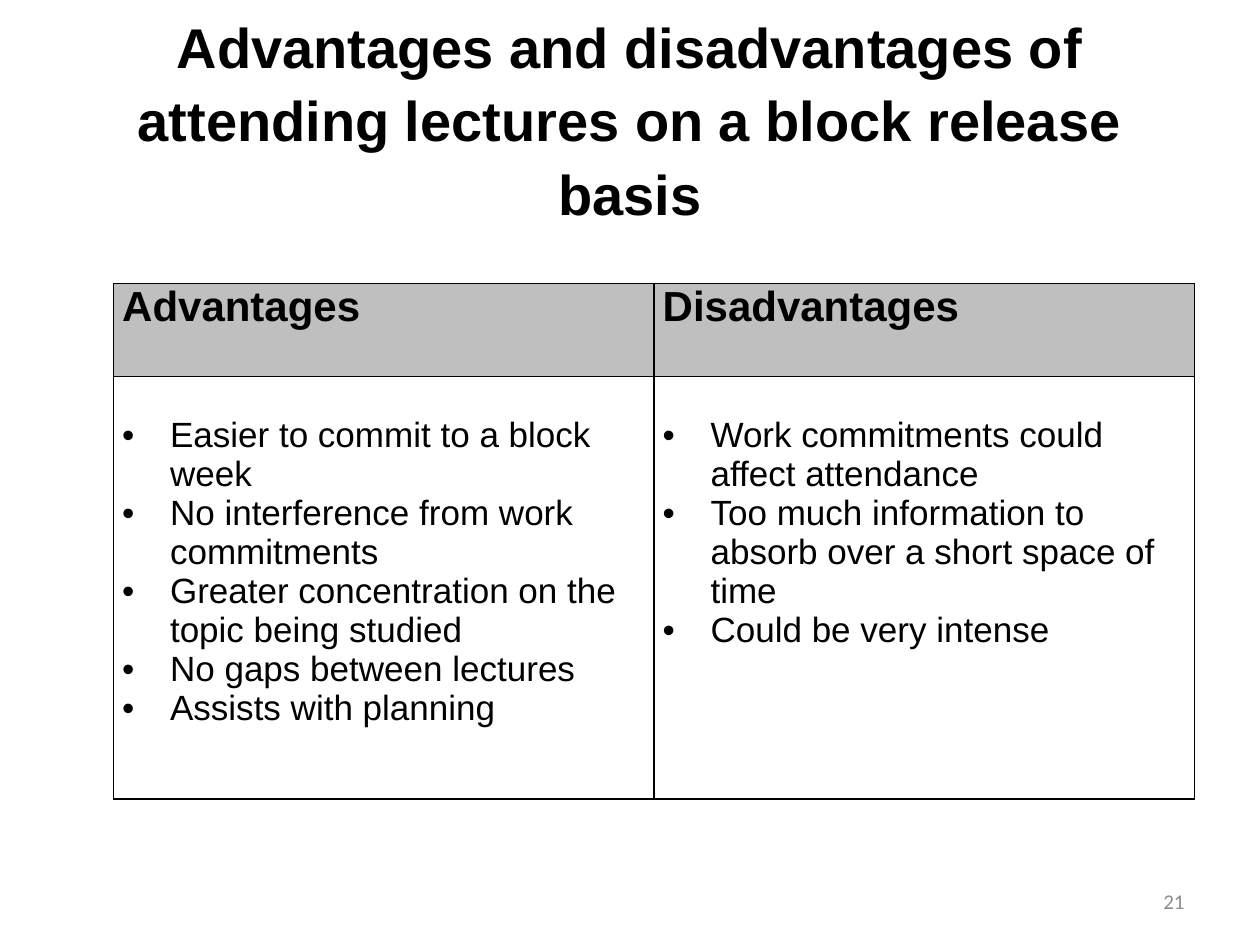
from lxml.etree import SubElement
from pptx import Presentation
from pptx.dml.color import RGBColor
from pptx.enum.text import MSO_ANCHOR as Anchor, MSO_AUTO_SIZE as AutoSize, PP_ALIGN as Align
from pptx.oxml.ns import qn
from pptx.util import Inches, Pt

INDENT = Inches(0.38)
BULLET_LINE = 0.31  # height of one line of list text, in inches


def write(frame, *lines, size, font="Arial", color="000000", bold=False,
          align=Align.LEFT, spacing=None, bullet=None):
    frame.word_wrap = True
    for index, line in enumerate(lines):
        paragraph = frame.paragraphs[0] if index == 0 else frame.add_paragraph()
        paragraph.alignment = align
        if spacing:
            paragraph.line_spacing = spacing
        run = paragraph.add_run()
        run.text = line
        run.font.name, run.font.size, run.font.bold = font, Pt(size), bold
        run.font.color.rgb = RGBColor.from_string(color)
        if bullet:
            properties = paragraph._p.get_or_add_pPr()
            properties.set("marL", str(INDENT))
            properties.set("indent", str(-INDENT))
            SubElement(properties, qn("a:buFont"), typeface="Arial")
            SubElement(properties, qn("a:buChar"), char=bullet)


def add_borders(cell, color="000000", width=1):
    properties = cell._tc.get_or_add_tcPr()
    for position, side in enumerate(("lnL", "lnR", "lnT", "lnB")):
        line = properties.makeelement(qn(f"a:{side}"), {"w": str(Pt(width))})
        fill = SubElement(line, qn("a:solidFill"))
        SubElement(fill, qn("a:srgbClr"), val=color)
        properties.insert(position, line)


presentation = Presentation()
presentation.slide_width, presentation.slide_height = Inches(10), Inches(7.5)
slide = presentation.slides.add_slide(presentation.slide_layouts[5])

# Title
title = slide.shapes.title
title.left, title.top, title.width, title.height = map(Inches, (0.5, 0.3, 9, 1.25))
title.text_frame.auto_size = AutoSize.NONE
title.text_frame.vertical_anchor = Anchor.MIDDLE
write(title.text_frame,
      "Advantages and disadvantages of attending lectures on a block release basis",
      size=32, bold=True, align=Align.CENTER, spacing=1.09)

# Comparison table: one column per heading
columns = {
    "Advantages": [
        "Easier to commit to a block week",
        "No interference from work commitments",
        "Greater concentration on the topic being studied",
        "No gaps between lectures",
        "Assists with planning",
    ],
    "Disadvantages": [
        "Work commitments could affect attendance",
        "Too much information to absorb over a short space of time",
        "Could be very intense",
    ],
}
row_heights = (0.74, 3.35)
table = slide.shapes.add_table(
    len(row_heights), len(columns), Inches(0.9), Inches(2.25),
    Inches(8.58), Inches(sum(row_heights))).table
table.horz_banding = False
for row, height in zip(table.rows, row_heights):
    row.height = Inches(height)

for column, (heading, points) in enumerate(columns.items()):
    header, body = table.cell(0, column), table.cell(1, column)
    for cell, fill, top in ((header, "BFBFBF", 0), (body, "FFFFFF", BULLET_LINE)):
        cell.margin_left = cell.margin_right = Inches(0.07)
        cell.margin_top, cell.margin_bottom = Inches(top), 0
        cell.fill.solid()
        cell.fill.fore_color.rgb = RGBColor.from_string(fill)
        add_borders(cell)
    write(header.text_frame, heading, size=24, bold=True)
    write(body.text_frame, *points, size=20, bullet="•")

# Page number
number = slide.shapes.add_textbox(Inches(7.17), Inches(6.95), Inches(2.33), Inches(0.4))
number.text_frame.vertical_anchor = Anchor.MIDDLE
write(number.text_frame, "21", size=12, font="Calibri", color="8C8C8C", align=Align.RIGHT)

presentation.save("out.pptx")
